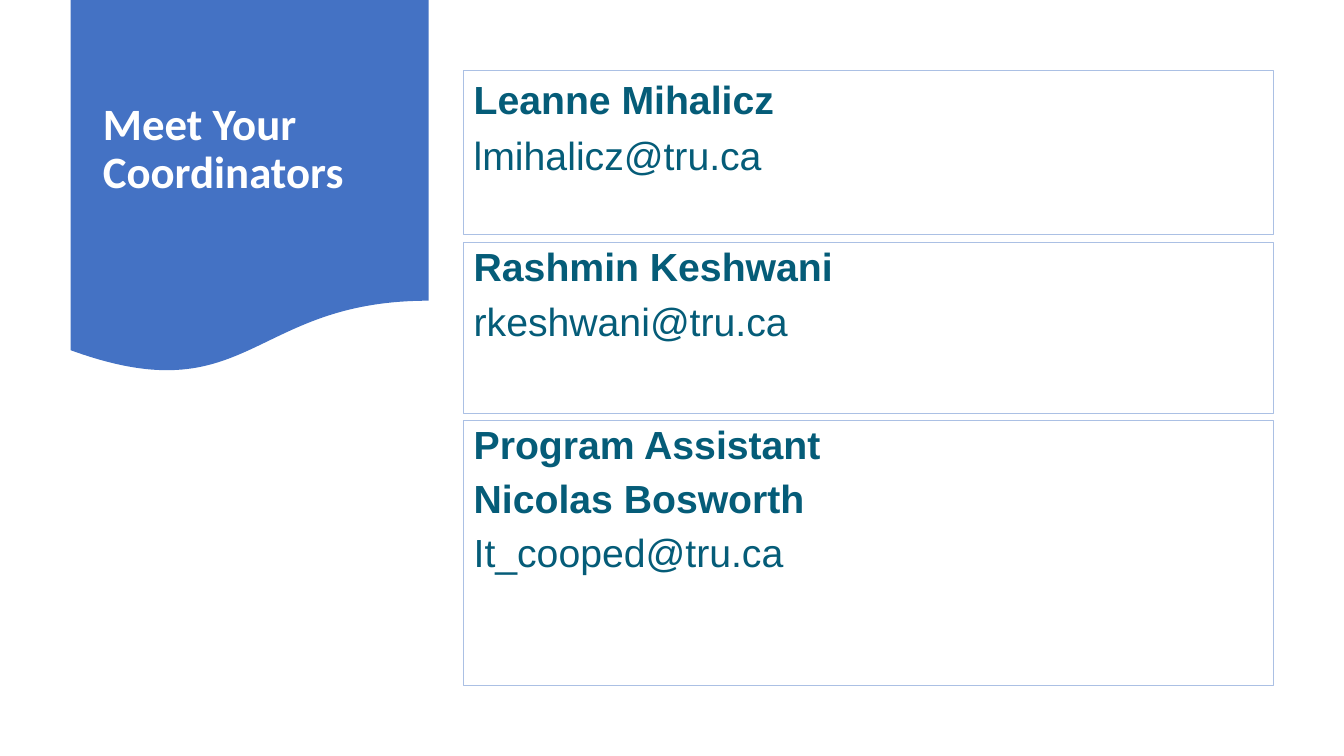
from dataclasses import dataclass

from pptx import Presentation
from pptx.dml.color import RGBColor
from pptx.enum.shapes import MSO_SHAPE as Kind
from pptx.enum.text import MSO_ANCHOR as Anchor, MSO_AUTO_SIZE as Fit, PP_ALIGN as Align
from pptx.util import Inches, Pt

BLUE = RGBColor(0x44, 0x72, 0xC4)
PALE = RGBColor(0xAB, 0xC0, 0xE4)
TEAL = RGBColor(0x05, 0x5C, 0x78)
WHITE = RGBColor(0xFF, 0xFF, 0xFF)

NAME = {"name": "Arial", "size": Pt(28), "bold": True}
MAIL = NAME | {"bold": False}
HEAD = {"name": "Calibri", "size": Pt(32), "bold": True}
LOOSE = {"alignment": Align.LEFT, "space_after": Pt(6)}
TIGHT = {"alignment": Align.LEFT, "line_spacing": 0.9}
FRAME = {"word_wrap": True, "auto_size": Fit.NONE}


@dataclass
class Card:
    top: float
    high: float
    names: list[str]
    mail: str
    form: dict
    gap: float = 0


CARDS = [
    Card(0.7, 1.63, ["Leanne Mihalicz"], "lmihalicz@tru.ca", LOOSE),
    Card(2.41, 1.69, ["Rashmin Keshwani"], "rkeshwani@tru.ca", TIGHT, 8.6),
    Card(4.17, 2.63, ["Program Assistant", "Nicolas Bosworth"],
         "It_cooped@tru.ca", TIGHT, 8.6),
]


def apply(item: object, form: dict) -> None:
    for key, value in form.items():
        setattr(item, key, value)


def write(para, text: str, font: dict, form: dict, color: RGBColor) -> None:
    para.text = text
    apply(para, form)
    run = para.runs[0]
    apply(run.font, font)
    run.font.color.rgb = color


def draw_card(slide, card: Card) -> None:
    box = slide.shapes.add_shape(Kind.RECTANGLE, Inches(4.6), Inches(card.top),
                                 Inches(8.03), Inches(card.high))
    box.shadow.inherit = False
    box.fill.background()
    box.line.color.rgb = PALE
    box.line.width = Pt(0.75)
    frame = box.text_frame
    apply(frame, FRAME | {"vertical_anchor": Anchor.TOP})
    lines = [(name, NAME) for name in card.names] + [(card.mail, MAIL)]
    for row, (text, font) in enumerate(lines):
        para = frame.add_paragraph() if row else frame.paragraphs[0]
        write(para, text, font, card.form, TEAL)
        if row and card.gap:
            para.space_before = Pt(card.gap)


def draw_head(slide) -> None:
    # Blue banner
    flag = slide.shapes.add_shape(Kind.FLOWCHART_DOCUMENT, Inches(0.7), Inches(0),
                                  Inches(3.55), Inches(3.72))
    flag.shadow.inherit = False
    flag.fill.solid()
    flag.fill.fore_color.rgb = BLUE
    flag.line.fill.background()

    # Title, raised above the banner
    title = slide.shapes.title
    apply(title, {"left": Inches(0.92), "top": Inches(0.19),
                  "width": Inches(3.11), "height": Inches(2.59)})
    frame = title.text_frame
    apply(frame, FRAME | {"vertical_anchor": Anchor.MIDDLE})
    write(frame.paragraphs[0], "Meet Your Coordinators", HEAD, TIGHT, WHITE)
    flag.element.addnext(title.element)


def main() -> None:
    deck = Presentation()
    deck.slide_width, deck.slide_height = Inches(13.33), Inches(7.5)
    slide = deck.slides.add_slide(deck.slide_layouts.get_by_name("Title Only"))
    draw_head(slide)
    # Contact cards
    for card in CARDS:
        draw_card(slide, card)
    deck.save("out.pptx")


if __name__ == "__main__":
    main()
